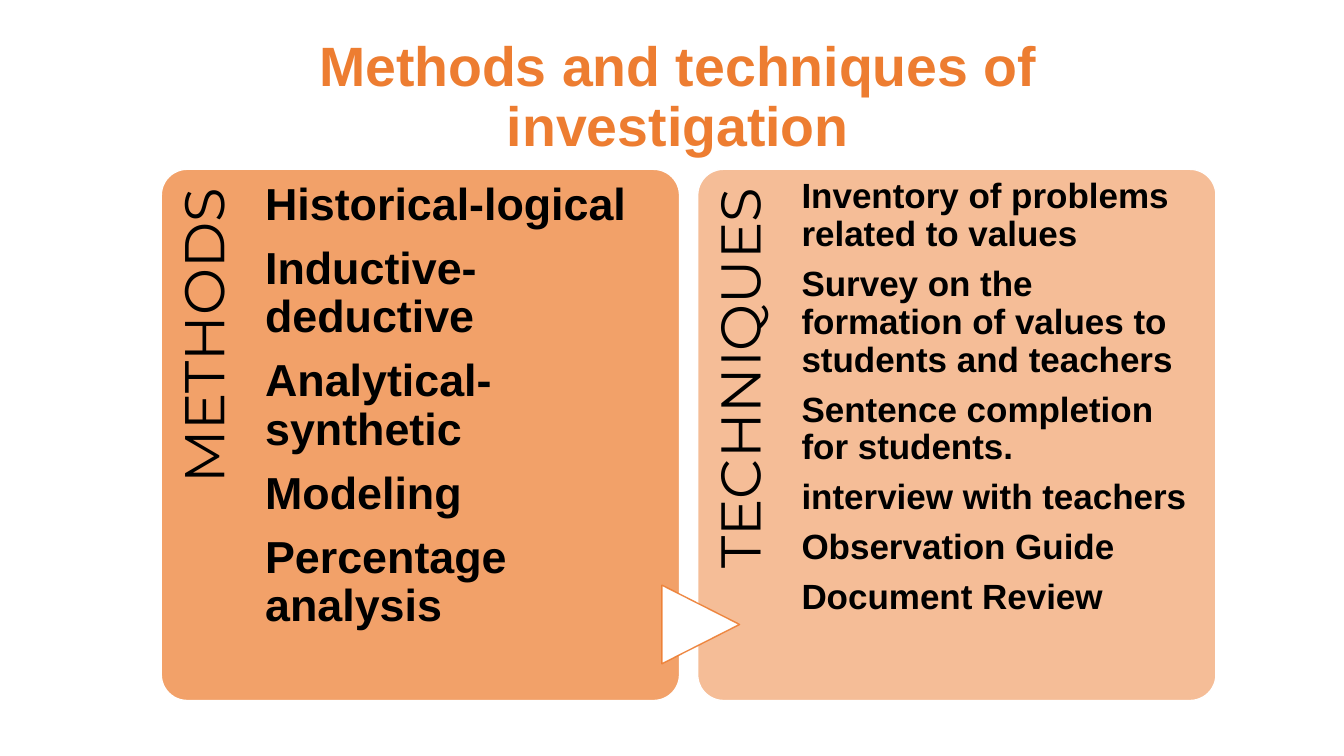
from pptx import Presentation
from pptx.dml.color import RGBColor
from pptx.enum.shapes import MSO_SHAPE as Shape
from pptx.enum.text import MSO_ANCHOR as Anchor, PP_ALIGN as Align
from pptx.oxml.ns import qn
from pptx.util import Inches, Pt
from lxml.etree import SubElement

COLORS = {
    "accent": "ED7D31",
    "methods": "F19759",
    "text": "000000",
    "white": "FFFFFF",
}

PANEL_LEFT, PANEL_TOP = 1.6, 1.68
PANEL_WIDTH, PANEL_HEIGHT = 5.14, 5.27
PANEL_STEP = 5.32

# heading, fill colour, fill opacity, text size, top inset, entries
PANELS = [
    ("METHODS", "methods", 90, 32, 0.12, [
        "Historical-logical",
        "Inductive-deductive",
        "Analytical-synthetic",
        "Modeling",
        "Percentage analysis",
    ]),
    ("TECHNIQUES", "accent", 50, 25, 0.09, [
        "Inventory of problems related to values",
        "Survey on the formation of values to students and teachers",
        "Sentence completion for students.",
        "interview with teachers",
        "Observation Guide",
        "Document Review",
    ]),
]


class SlideBuilder:
    def __init__(self, slide):
        self.slide = slide
        self.body_font = "Arial"
        self.label_font = "Montserrat"

    def paint(self, fill, color, opacity=100):
        fill.solid()
        fill.fore_color.rgb = RGBColor.from_string(COLORS[color])
        if opacity < 100:
            rgb = fill._xPr.find(f"{qn('a:solidFill')}/{qn('a:srgbClr')}")
            SubElement(rgb, qn("a:alpha"), val=str(opacity * 1000))

    def block(self, kind, box, fill, line, fill_opacity=100, line_opacity=100):
        block = self.slide.shapes.add_shape(kind, *map(Inches, box))
        block.shadow.inherit = False
        self.paint(block.fill, fill, fill_opacity)
        block.line.width = Pt(1)
        self.paint(block.line.fill, line, line_opacity)
        return block

    def text(self, box, lines, size, insets, font=None, color="text",
             bold=True, align=Align.LEFT, anchor=Anchor.TOP, gap=0.35):
        holder = self.slide.shapes.add_textbox(*map(Inches, box))
        frame = holder.text_frame
        frame.word_wrap = True
        frame.vertical_anchor = anchor
        (frame.margin_left, frame.margin_top,
         frame.margin_right, frame.margin_bottom) = map(Inches, insets)
        frame.text = "\n".join(lines)
        for paragraph in frame.paragraphs:
            paragraph.alignment = align
            paragraph.line_spacing = 0.9
            paragraph.space_after = Pt(size * gap)
            for run in paragraph.runs:
                run.font.name = font or self.body_font
                run.font.size = Pt(size)
                run.font.bold = bold
                run.font.color.rgb = RGBColor.from_string(COLORS[color])
        return holder

    def panel(self, left, heading, color, opacity, size, top_inset, entries):
        card = self.block(Shape.ROUNDED_RECTANGLE,
                          (left, PANEL_TOP, PANEL_WIDTH, PANEL_HEIGHT),
                          color, "white", fill_opacity=opacity)
        card.adjustments[0] = 0.05
        label = self.text((left - 1.65, 3.32, 4.32, 1.03), [heading], 40,
                          (0, 0.15, 0.19, 0), font=self.label_font,
                          bold=False, align=Align.RIGHT)
        label.rotation = 270
        self.text((left + 1.03, PANEL_TOP, 3.83, PANEL_HEIGHT), entries, size,
                  (0, top_inset, 0, 0))


def main():
    deck = Presentation()
    deck.slide_width, deck.slide_height = Inches(13.33), Inches(7.5)
    builder = SlideBuilder(deck.slides.add_slide(deck.slide_layouts[6]))

    # Title
    builder.text((1.53, 0.28, 10.54, 1.4),
                 ["Methods and techniques of investigation"], 39.6,
                 (0.1, 0.05, 0.25, 0.05), color="accent",
                 align=Align.CENTER, anchor=Anchor.MIDDLE, gap=0)

    # Methods and techniques panels
    for index, panel in enumerate(PANELS):
        builder.panel(PANEL_LEFT + index * PANEL_STEP, *panel)

    # Arrow from methods to techniques
    arrow = builder.block(Shape.FLOWCHART_EXTRACT, (6.56, 5.81, 0.78, 0.77),
                          "white", "accent", line_opacity=90)
    arrow.rotation = 90

    deck.save("out.pptx")


if __name__ == "__main__":
    main()
